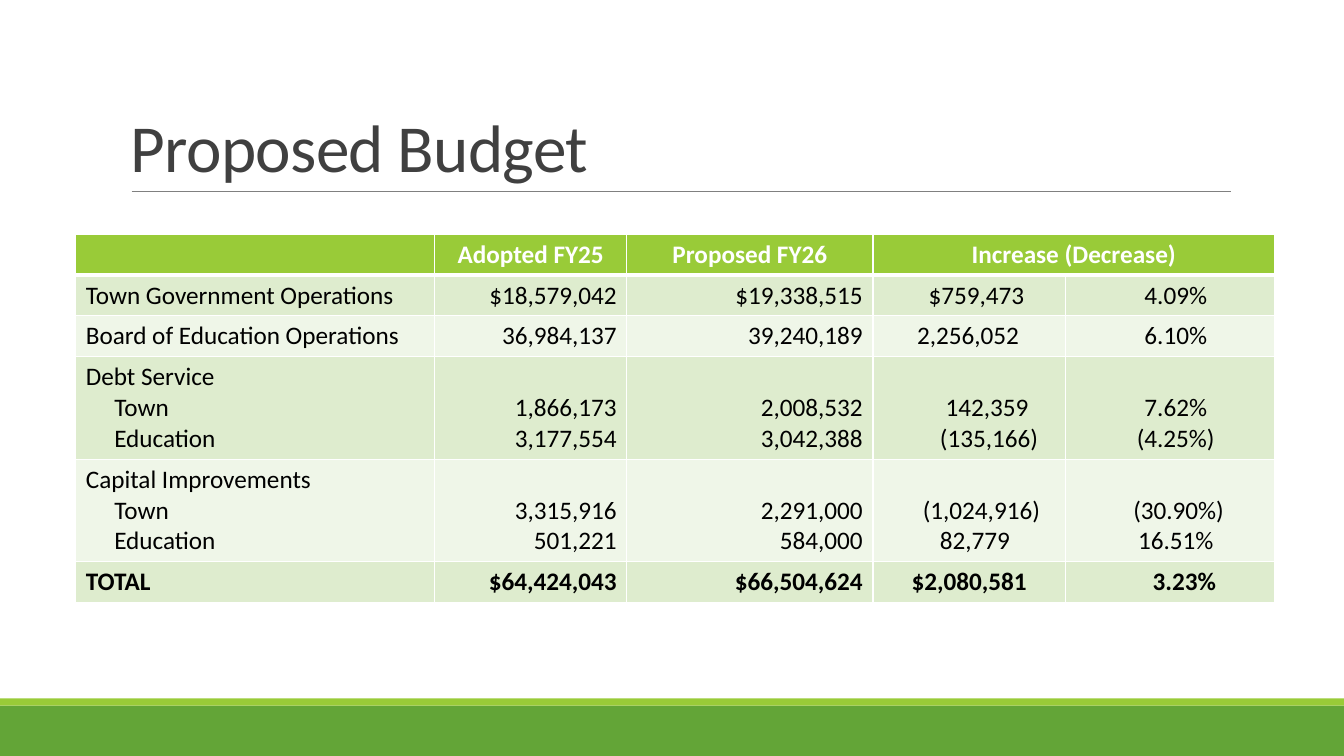
"""Build the proposed budget slide."""
from dataclasses import dataclass

from lxml import etree
from pptx import Presentation
from pptx import util as u
from pptx.dml import color
from pptx.enum import shapes, text
from pptx.oxml import ns

SPACE = 0.1435
LIME, GREEN, WHITE, BLACK = "99CB38", "63A537", "FFFFFF", "000000"
BANDS = ("DEECCE", "EFF6E8")
WIDTHS = (9.04, 4.85, 6.2, 4.85, 5.28)
LEFT, CENTER, RIGHT = (text.PP_ALIGN.LEFT, text.PP_ALIGN.CENTER,
                       text.PP_ALIGN.RIGHT)
HEAD = ("", "Adopted FY25", "Proposed FY26", "Increase (Decrease)", "")


@dataclass
class Line:
    """One budget line, with indents in space widths per column."""
    words: tuple[str, ...]
    pads: tuple[int, ...] = (0, 0, 0, 0, 0)


@dataclass
class Row:
    """One table row of budget lines."""
    lines: list[Line]
    bold: bool = False
    aligns: tuple = (LEFT, RIGHT, RIGHT, LEFT, CENTER)


@dataclass
class Bar:
    """One filled band of the footer."""
    top: float
    height: float
    fill: str


ROWS = [
    Row([Line(("Town Government Operations", "$18,579,042", "$19,338,515",
               "$759,473", "4.09%"), (0, 0, 0, 8, 2))]),
    Row([Line(("Board of Education Operations", "36,984,137", "39,240,189",
               "2,256,052", "6.10%"), (0, 0, 0, 6, 2))]),
    Row([Line(("Debt Service", "", "", "", "")),
         Line(("Town", "1,866,173", "2,008,532", "142,359", "7.62%"),
              (5, 0, 0, 11, 2)),
         Line(("Education", "3,177,554", "3,042,388", "(135,166)", "(4.25%)"),
              (5, 0, 0, 10, 2))]),
    Row([Line(("Capital Improvements", "", "", "", "")),
         Line(("Town", "3,315,916", "2,291,000", "(1,024,916)", "(30.90%)"),
              (5, 0, 0, 7, 3)),
         Line(("Education", "501,221", "584,000", "82,779", "16.51%"),
              (5, 0, 0, 10, 2))]),
    Row([Line(("TOTAL", "$64,424,043", "$66,504,624", "$2,080,581", "3.23%"),
              (0, 0, 0, 0, 5))], True, (LEFT, RIGHT, RIGHT, CENTER, CENTER)),
]
BARS = [Bar(17.78, 1.27, GREEN), Bar(17.6, 0.18, LIME)]


def rgb(code: str) -> color.RGBColor:
    """Turn a hex string into a colour."""
    return color.RGBColor.from_string(code)


def apply(item, form: dict) -> None:
    """Set each format value on an object."""
    for name, value in form.items():
        setattr(item, name, value)


def write(para, words: str, tint: str, size: int = 18, bold: bool = False):
    """Add a formatted run to a paragraph."""
    run = para.add_run()
    run.text = words
    apply(run.font, {"name": "Calibri", "size": u.Pt(size), "bold": bold})
    run.font.color.rgb = rgb(tint)
    return run


def edge(cell, top: float, base: float) -> None:
    """Draw the white borders of a cell."""
    props = cell._tc.get_or_add_tcPr()
    sides = {"L": 1, "R": 1, "T": top, "B": base}
    for spot, (side, width) in enumerate(sides.items()):
        line = etree.Element(ns.qn(f"a:ln{side}"), w=str(u.Pt(width)))
        fill = etree.SubElement(line, ns.qn("a:solidFill"))
        etree.SubElement(fill, ns.qn("a:srgbClr"), val=WHITE)
        props.insert(spot, line)


def fill_cell(cell, fill: str, top: float, base: float) -> None:
    """Give a cell its fill, anchor and borders."""
    cell.fill.solid()
    cell.fill.fore_color.rgb = rgb(fill)
    cell.vertical_anchor = text.MSO_ANCHOR.BOTTOM
    edge(cell, top, base)


def fill_row(table, index: int, row: Row) -> None:
    """Write one row of the table."""
    head = index == 0
    fill = LIME if head else BANDS[(index - 1) % 2]
    table.rows[index].height = u.Cm(1.03 if len(row.lines) == 1 else 2.58)
    for col, align in enumerate(row.aligns):
        cell = table.cell(index, col)
        fill_cell(cell, fill, 3 if index == 1 else 1, 3 if head else 1)
        frame = cell.text_frame
        lines = [line for line in row.lines if line.words[col]]
        for count, line in enumerate(lines):
            para = frame.add_paragraph() if count else frame.paragraphs[0]
            para.alignment = align
            props = para._p.get_or_add_pPr()
            props.set("marL", str(u.Cm(line.pads[col] * SPACE)))
            props.set("indent", "0")
            write(para, line.words[col], WHITE if head else BLACK,
                  bold=row.bold)


def add_grid(slide) -> None:
    """Add the budget table."""
    rows = [Row([Line(HEAD)], True, (CENTER,) * 5), *ROWS]
    table = slide.shapes.add_table(
        len(rows), len(WIDTHS), u.Cm(1.91), u.Cm(5.9),
        u.Cm(sum(WIDTHS)), u.Cm(9.2)).table
    apply(table, {"first_row": False, "horz_banding": False})
    for col, width in zip(table.columns, WIDTHS):
        col.width = u.Cm(width)
    for index, row in enumerate(rows):
        fill_row(table, index, row)
    table.cell(0, 3).merge(table.cell(0, 4))


def add_title(slide) -> None:
    """Add the title and the rule below it."""
    rule = slide.shapes.add_connector(
        shapes.MSO_CONNECTOR.STRAIGHT,
        u.Cm(3.32), u.Cm(4.82), u.Cm(31.01), u.Cm(4.82))
    rule.line.color.rgb = rgb("808080")
    rule.line.width = u.Pt(0.5)
    etree.SubElement(rule._element.spPr, ns.qn("a:effectLst"))
    box = slide.shapes.add_textbox(u.Cm(3.05), u.Cm(0.79),
                                   u.Cm(27.94), u.Cm(4.04))
    apply(box.text_frame, {"word_wrap": True,
                           "vertical_anchor": text.MSO_ANCHOR.BOTTOM})
    para = box.text_frame.paragraphs[0]
    para.line_spacing = 0.85
    run = write(para, "Proposed Budget", "404040", 48)
    run._r.get_or_add_rPr().set("spc", "-50")


def add_bar(slide, bar: Bar, width: int) -> None:
    """Add one footer band."""
    shape = slide.shapes.add_shape(shapes.MSO_SHAPE.RECTANGLE, 0,
                                   u.Cm(bar.top), width, u.Cm(bar.height))
    shape.shadow.inherit = False
    shape.fill.solid()
    shape.fill.fore_color.rgb = rgb(bar.fill)
    shape.line.fill.background()


def main() -> None:
    """Build and save the slide."""
    deck = Presentation()
    apply(deck, {"slide_width": u.Cm(33.87), "slide_height": u.Cm(19.05)})
    slide = deck.slides.add_slide(deck.slide_layouts[6])
    for bar in BARS:
        add_bar(slide, bar, deck.slide_width)
    add_title(slide)
    add_grid(slide)
    deck.save("out.pptx")


if __name__ == "__main__":
    main()
